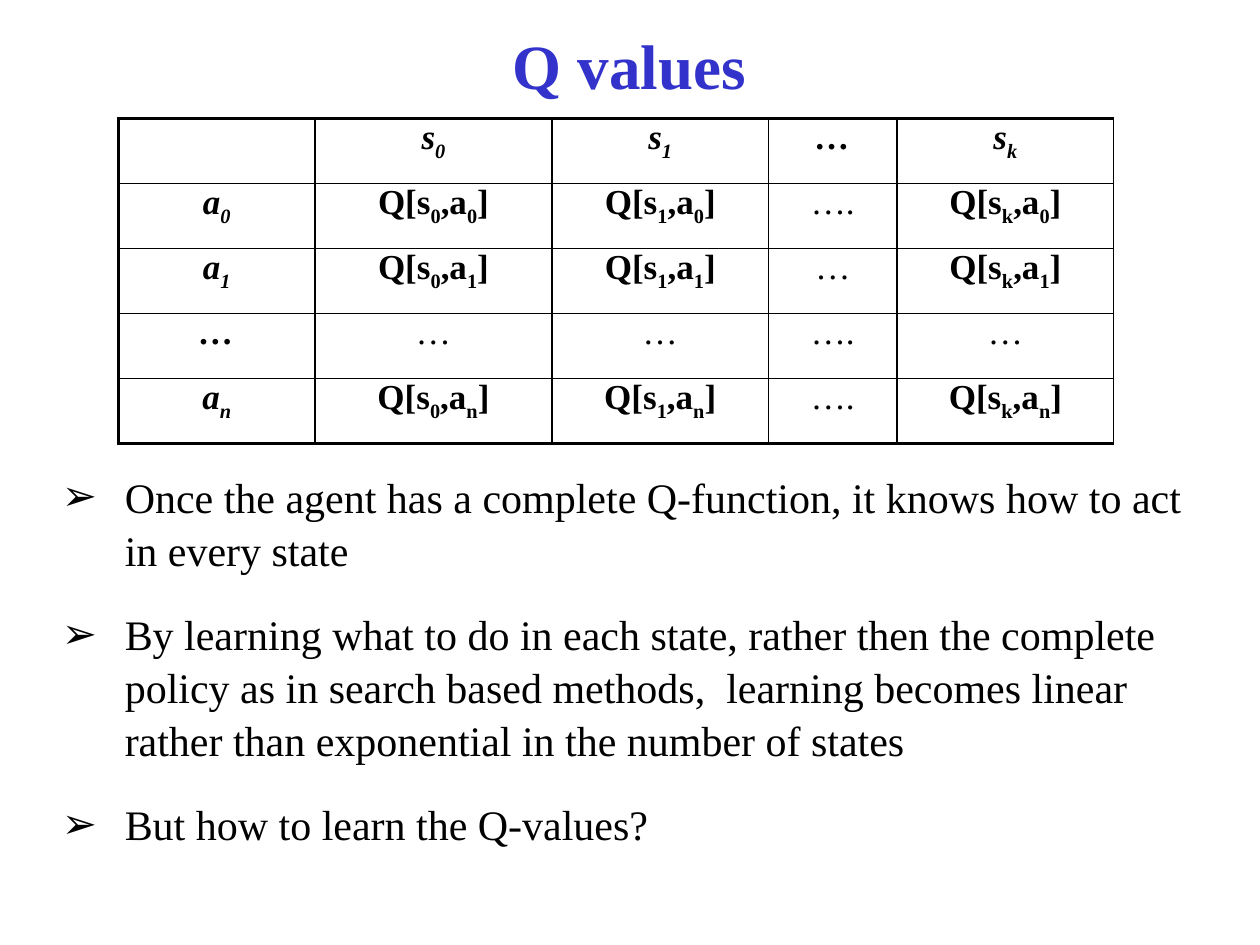
"""Build the Q values slide: a state-action table above three bullet points."""
from lxml import etree
from pptx import Presentation
from pptx.dml.color import RGBColor
from pptx.enum.text import MSO_ANCHOR, MSO_AUTO_SIZE, PP_ALIGN
from pptx.oxml import parse_xml
from pptx.oxml.ns import nsdecls, qn
from pptx.util import Inches, Pt

CENTER, LEFT = PP_ALIGN.CENTER, PP_ALIGN.LEFT
MIDDLE, TOP = MSO_ANCHOR.MIDDLE, MSO_ANCHOR.TOP
NO_AUTOFIT = MSO_AUTO_SIZE.NONE
BLACK, BLUE = "000000", "3333CC"
THIN, THICK = Pt(1), Pt(2.25)


def add_run(paragraph, text, size, color=BLACK, bold=False, italic=False):
    run = paragraph.add_run()
    run.text = text
    run.font.name = "Times New Roman"
    run.font.size = Pt(size)
    run.font.bold = bold
    run.font.italic = italic
    run.font.color.rgb = RGBColor.from_string(color)
    return run


def add_border(cell, position, side, width):
    line = parse_xml(
        f'<a:ln{side} {nsdecls("a")} w="{width}" cap="flat" cmpd="sng"><a:solidFill>'
        f'<a:srgbClr val="{BLACK}"/></a:solidFill><a:prstDash val="solid"/></a:ln{side}>')
    cell._tc.get_or_add_tcPr().insert(position, line)


prs = Presentation()
prs.slide_width, prs.slide_height = Inches(10), Inches(7.5)
slide = prs.slides.add_slide(prs.slide_layouts[1])

title = slide.shapes.title
title.left, title.top = Inches(0.33), Inches(0.17)
title.width, title.height = Inches(9.33), Inches(0.75)
title.text_frame.auto_size = NO_AUTOFIT
title.text_frame.vertical_anchor = MIDDLE
heading = title.text_frame.paragraphs[0]
heading.alignment = CENTER
heading.line_spacing = 0.9
add_run(heading, "Q values", 36, BLUE, bold=True)

points = [
    "Once the agent has a complete Q-function, it knows how to act in every state",
    "By learning what to do in each state, rather then the complete policy as in "
    "search based methods,  learning becomes linear rather than exponential in "
    "the number of states",
    "But how to learn the Q-values?",
]
body = slide.placeholders[1]
body.left, body.top = Inches(0.39), Inches(3.67)
body.width, body.height = Inches(9.37), Inches(2.52)
body.text_frame.auto_size = NO_AUTOFIT
body.text_frame.vertical_anchor = TOP
for i, point in enumerate(points):
    item = body.text_frame.add_paragraph() if i else body.text_frame.paragraphs[0]
    item.alignment = LEFT
    item.line_spacing = 1.05
    item.space_before = Pt(18)
    add_run(item, point, 24)
    properties = item._p.get_or_add_pPr()
    properties.set("marL", str(Inches(0.5)))
    properties.set("indent", str(-Inches(0.5)))
    bullet_color = etree.SubElement(properties, qn("a:buClr"))
    etree.SubElement(bullet_color, qn("a:srgbClr"), val=BLACK)
    etree.SubElement(properties, qn("a:buChar"), char="➢")

q_rows = [
    ["", "s_0", "s_1", "…", "s_k"],
    ["a_0", "Q[s_0,a_0]", "Q[s_1,a_0]", "….", "Q[s_k,a_0]"],
    ["a_1", "Q[s_0,a_1]", "Q[s_1,a_1]", "…", "Q[s_k,a_1]"],
    ["…", "…", "…", "….", "…"],
    ["a_n", "Q[s_0,a_n]", "Q[s_1,a_n]", "….", "Q[s_k,a_n]"],
]
column_widths = [1.56, 1.88, 1.72, 1.02, 1.72]
last_row = len(q_rows) - 1
q_table = slide.shapes.add_table(
    len(q_rows), len(column_widths),
    Inches(0.94), Inches(0.94), Inches(7.9), Inches(2.58)).table
q_table.first_row = q_table.horz_banding = False
for column, width in zip(q_table.columns, column_widths):
    column.width = Inches(width)

for r, labels in enumerate(q_rows):
    for c, label in enumerate(labels):
        cell = q_table.cell(r, c)
        cell.fill.background()
        cell.margin_left = cell.margin_right = Inches(0.1)
        cell.margin_top = cell.margin_bottom = 0
        borders = {
            "L": THIN if c else THICK,
            "R": THIN,
            "T": THIN if r else THICK,
            "B": THICK if r == last_row else THIN,
        }
        for position, (side, width) in enumerate(borders.items()):
            add_border(cell, position, side, width)
        entry = cell.text_frame.paragraphs[0]
        entry.alignment = CENTER
        entry.space_before = Pt(18)
        is_header = r == 0 or c == 0
        is_bold = is_header or "_" in label
        for i, part in enumerate(label.split("_")):
            subscript, rest = (part[:1], part[1:]) if i else ("", part)
            if subscript:
                index = add_run(entry, subscript, 20, bold=is_bold, italic=is_header)
                index._r.get_or_add_rPr().set("baseline", "-25000")
            if rest:
                add_run(entry, rest, 20, bold=is_bold, italic=is_header)

prs.save("out.pptx")
